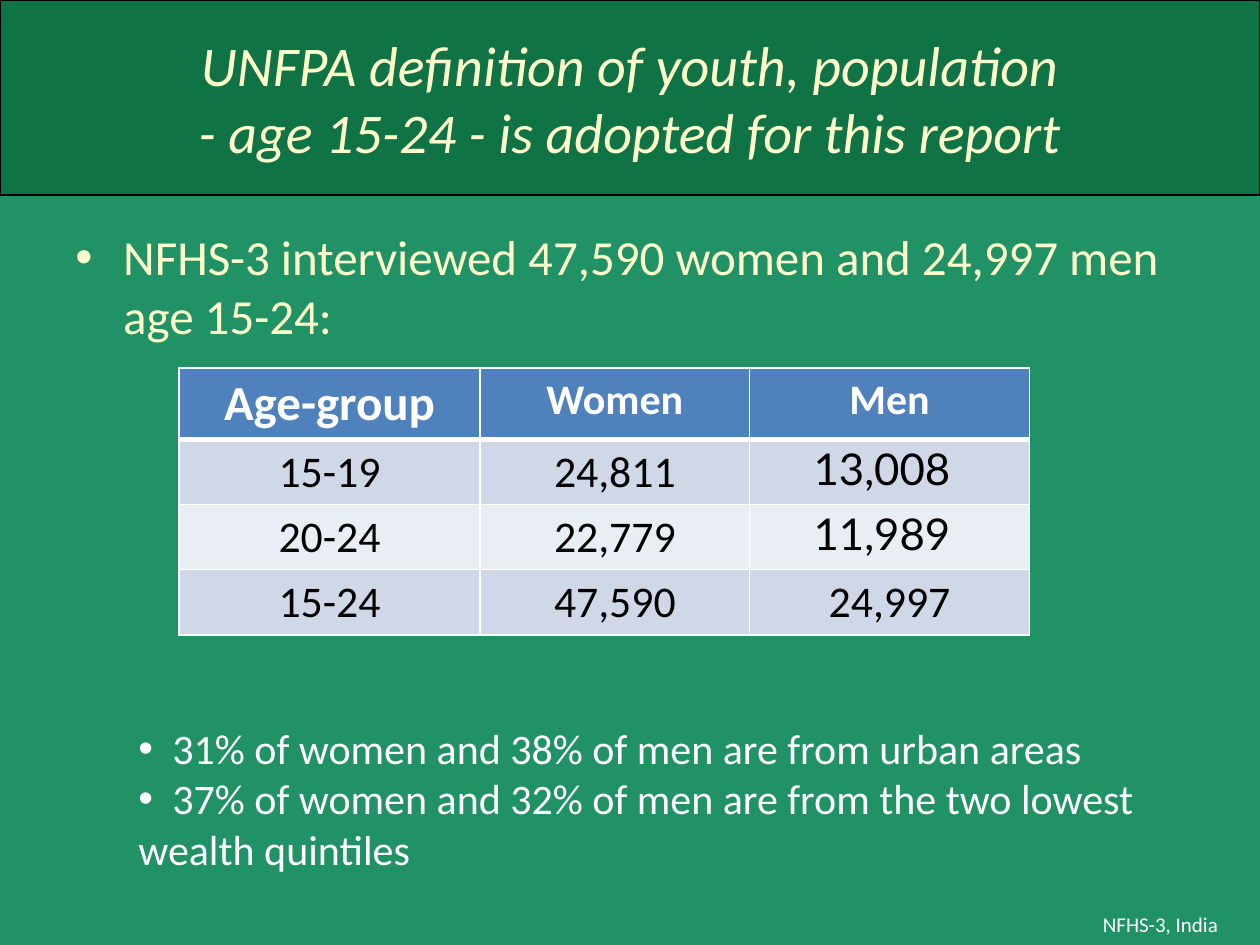
from dataclasses import dataclass

from lxml.etree import SubElement
from pptx import Presentation
from pptx.dml.color import RGBColor as RGB
from pptx.enum.shapes import MSO_SHAPE as SHAPE
from pptx.enum.text import MSO_ANCHOR as ANCHOR, PP_ALIGN as ALIGN
from pptx.oxml.ns import qn
from pptx.util import Inches, Pt


@dataclass(frozen=True)
class Theme:
    green: str = "219166"
    dark_green: str = "005828"
    cream: str = "FFFFCC"
    white: str = "FFFFFF"
    black: str = "000000"
    header: str = "4F81BD"
    bands: tuple = ("D0D8E8", "E9EDF4")
    font: str = "Calibri"
    figure_font: str = "Lato"
    title: int = 32
    body: int = 28
    cell: int = 25
    detail: int = 24
    footer: int = 12


@dataclass(frozen=True)
class Box:
    left: float
    top: float
    width: float
    height: float

    def lengths(self) -> list:
        return [Inches(v) for v in (self.left, self.top, self.width, self.height)]


@dataclass(frozen=True)
class Style:
    size: int
    color: str
    font: str = "Calibri"
    bold: bool = False
    italic: bool = False
    align: ALIGN = ALIGN.LEFT


T = Theme()


def write(p, text: str, style: Style) -> None:
    p.text = text
    p.alignment = style.align
    formats = {"size": Pt(style.size), "name": style.font,
               "bold": style.bold, "italic": style.italic}
    for r in p.runs:
        for name, value in formats.items():
            setattr(r.font, name, value)
        r.font.color.rgb = RGB.from_string(style.color)


def set_bullet(p, margin: float = 0, indent: float = 0, tab: float = 0) -> None:
    pPr = p._p.get_or_add_pPr()
    pPr.set("marL", str(Inches(margin)))
    pPr.set("indent", str(Inches(indent)))
    SubElement(pPr, qn("a:buFont"), typeface="Arial")
    SubElement(pPr, qn("a:buChar"), char="•")
    if tab:
        tabs = SubElement(pPr, qn("a:tabLst"))
        SubElement(tabs, qn("a:tab"), pos=str(Inches(tab)), algn="l")


def add_panel(slide, box: Box, fill: str, text: str, style: Style):
    s = slide.shapes.add_shape(SHAPE.RECTANGLE, *box.lengths())
    s.shadow.inherit = False
    s.fill.solid()
    s.fill.fore_color.rgb = RGB.from_string(fill)
    s.line.fill.background()
    tf = s.text_frame
    tf.word_wrap = True
    tf.vertical_anchor = ANCHOR.MIDDLE
    write(tf.paragraphs[0], text, style)
    return s


def add_title(slide) -> None:
    style = Style(T.title, T.cream, italic=True, align=ALIGN.CENTER)
    s = add_panel(slide, Box(0, 0, 10, 1.55), T.dark_green,
                  "UNFPA definition of youth, population\v"
                  "- age 15-24 - is adopted for this report", style)
    color = s._element.spPr.find(qn("a:solidFill"))[0]
    SubElement(color, qn("a:alpha"), val="51000")
    s.line.color.rgb = RGB.from_string(T.black)
    s.line.width = Pt(1)


def add_text(slide, box: Box, anchor: ANCHOR, lines: list, style: Style) -> list:
    tf = slide.shapes.add_textbox(*box.lengths()).text_frame
    tf.word_wrap = True
    tf.vertical_anchor = anchor
    for i, line in enumerate(lines):
        p = tf.add_paragraph() if i else tf.paragraphs[0]
        write(p, line, style)
    return list(tf.paragraphs)


def set_borders(cell, widths: dict) -> None:
    tcPr = cell._tc.get_or_add_tcPr()
    for side, width in widths.items():
        ln = SubElement(tcPr, qn(f"a:ln{side}"), w=str(Pt(width)))
        fill = SubElement(ln, qn("a:solidFill"))
        SubElement(fill, qn("a:srgbClr"), val=T.white)


def tighten(cell) -> None:
    """Set a figure close in its cell, a little left of centre."""
    formats = {"margin_left": Inches(0.02), "margin_right": Inches(0.14),
               "margin_top": 0, "margin_bottom": 0, "vertical_anchor": ANCHOR.MIDDLE}
    for name, value in formats.items():
        setattr(cell, name, value)
    cell.text_frame.paragraphs[0].line_spacing = 0.85


def add_age_table(slide) -> None:
    rows = [("Age-group", "Women", "Men"),
            ("15-19", "24,811", "13,008"),
            ("20-24", "22,779", "11,989"),
            ("15-24", "47,590", "24,997")]
    table = slide.shapes.add_table(4, 3, *Box(1.42, 2.92, 6.75, 2.09).lengths()).table
    for column, width in zip(table.columns, (2.39, 2.14, 2.22)):
        column.width = Inches(width)
    for i, row in enumerate(rows):
        is_header = i == 0
        table.rows[i].height = Inches(0.56 if is_header else 0.51)
        for j, text in enumerate(row):
            cell = table.cell(i, j)
            is_figure = j == 2 and i in (1, 2)
            if is_header:
                size = T.detail if j else T.body
                style = Style(size, T.white, bold=True, align=ALIGN.CENTER)
            else:
                font = T.figure_font if is_figure else T.font
                style = Style(T.cell, T.black, font, align=ALIGN.CENTER)
            write(cell.text_frame.paragraphs[0], text, style)
            if is_figure:
                tighten(cell)
            set_borders(cell, {"L": 1, "R": 1, "T": 3 if i == 1 else 1,
                               "B": 3 if is_header else 1})
            cell.fill.solid()
            fill = T.header if is_header else T.bands[(i - 1) % 2]
            cell.fill.fore_color.rgb = RGB.from_string(fill)


def main() -> None:
    prs = Presentation()
    prs.slide_width, prs.slide_height = Inches(10), Inches(7.5)
    slide = prs.slides.add_slide(prs.slide_layouts[6])
    slide.background.fill.solid()
    slide.background.fill.fore_color.rgb = RGB.from_string(T.green)

    add_title(slide)
    intro, = add_text(slide, Box(0.5, 1.75, 9, 4.95), ANCHOR.TOP,
                      ["NFHS-3 interviewed 47,590 women and 24,997 men age 15-24:"],
                      Style(T.body, T.cream))
    intro.space_before = Pt(0.2 * T.body)
    set_bullet(intro, margin=0.38, indent=-0.38)
    add_age_table(slide)
    details = ["\t31% of women and 38% of men are from urban areas",
               "\t37% of women and 32% of men are from the two lowest wealth quintiles"]
    for p in add_text(slide, Box(1, 5.42, 8.58, 1.83), ANCHOR.MIDDLE, details,
                      Style(T.detail, T.white)):
        set_bullet(p, tab=0.27)
    add_panel(slide, Box(8.42, 7.17, 1.58, 0.33), T.green, "NFHS-3, India",
              Style(T.footer, T.white, align=ALIGN.CENTER))
    prs.save("out.pptx")


if __name__ == "__main__":
    main()
